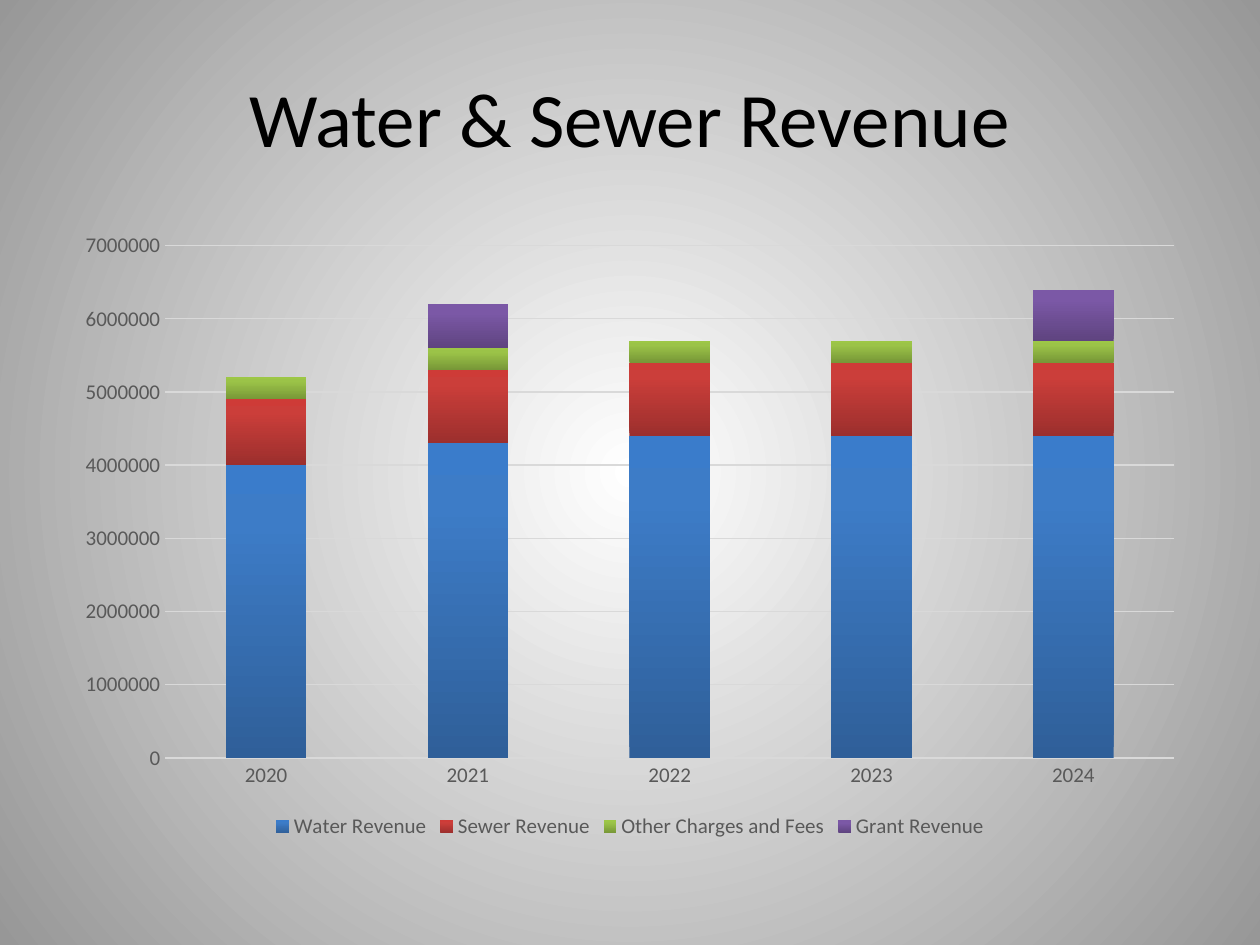
from dataclasses import dataclass

from pptx import Presentation
from pptx import util as u
from pptx.chart.data import CategoryChartData
from pptx.dml.color import RGBColor
from pptx.enum import chart as ch, text
from pptx.oxml import parse_xml
from pptx.oxml.ns import nsdecls, qn

FONT = "Calibri"
BLACK = RGBColor(0x00, 0x00, 0x00)
WHITE = RGBColor(0xFF, 0xFF, 0xFF)
EDGE_GREY = RGBColor(0x97, 0x97, 0x97)
LABEL_GREY = RGBColor(0x59, 0x59, 0x59)
GRID_GREY = RGBColor(0xD9, 0xD9, 0xD9)
BLUES = (RGBColor(0x2F, 0x5F, 0x99), RGBColor(0x3D, 0x7C, 0xC7), RGBColor(0x3A, 0x7C, 0xCB))
REDS = (RGBColor(0x9C, 0x2F, 0x2D), RGBColor(0xCB, 0x3E, 0x3A), RGBColor(0xCE, 0x3B, 0x37))
GREENS = (RGBColor(0x77, 0x97, 0x37), RGBColor(0x9B, 0xC3, 0x48), RGBColor(0x9D, 0xC7, 0x46))
PURPLES = (RGBColor(0x5F, 0x44, 0x80), RGBColor(0x7B, 0x58, 0xA6), RGBColor(0x7C, 0x57, 0xA8))

UPWARD = '<a:lin ang="16200000" scaled="0"/>'
FROM_CENTRE = ('<a:path path="circle"><a:fillToRect l="50000" t="50000" '
               'r="50000" b="50000"/></a:path>')
BAR_STOPS = (0, 80, 100)
MILLION = 1_000_000


@dataclass
class Revenue:
    name: str
    millions: tuple[float, ...]
    colours: tuple[RGBColor, ...]


YEARS = ("2020", "2021", "2022", "2023", "2024")
REVENUES = (
    Revenue("Water Revenue", (4, 4.3, 4.4, 4.4, 4.4), BLUES),
    Revenue("Sewer Revenue", (0.9, 1, 1, 1, 1), REDS),
    Revenue("Other Charges and Fees", (0.3,) * 5, GREENS),
    Revenue("Grant Revenue", (0, 0.6, 0, 0, 0.7), PURPLES),
)


def paint_gradient(fill, colours: tuple[RGBColor, ...], stops: tuple[int, ...],
                   direction: str) -> None:
    """Swap a solid fill for a gradient with percent stops."""
    fill.solid()
    parent = fill._xPr
    marks = "".join(f'<a:gs pos="{pos * 1000}"><a:srgbClr val="{colour}"/></a:gs>'
                    for pos, colour in zip(stops, colours))
    gradient = parse_xml(f'<a:gradFill {nsdecls("a")} rotWithShape="1">'
                         f'<a:gsLst>{marks}</a:gsLst>{direction}</a:gradFill>')
    parent.replace(parent.find(qn("a:solidFill")), gradient)


def style_font(font, size: float, colour: RGBColor) -> None:
    font.name, font.size, font.color.rgb = FONT, u.Pt(size), colour


def style_line(line, width: float) -> None:
    line.color.rgb, line.width = GRID_GREY, u.Pt(width)


def add_title(s, words: str) -> None:
    sp = s.shapes.title
    sp.left, sp.top, sp.width, sp.height = u.Cm(1.27), u.Cm(0.76), u.Cm(22.86), u.Cm(3.18)
    tf = sp.text_frame
    tf.vertical_anchor = text.MSO_ANCHOR.MIDDLE
    p = tf.paragraphs[0]
    p.alignment = text.PP_ALIGN.CENTER
    r = p.add_run()
    r.text = words
    style_font(r.font, 44, BLACK)


def add_revenue_chart(s, revenues: tuple[Revenue, ...]) -> None:
    data = CategoryChartData(number_format="General")
    data.categories = YEARS
    for revenue in revenues:
        data.add_series(revenue.name, [round(v * MILLION) for v in revenue.millions])
    chart = s.shapes.add_chart(ch.XL_CHART_TYPE.COLUMN_STACKED, u.Cm(1.27), u.Cm(4.45),
                               u.Cm(22.86), u.Cm(12.57), data).chart
    chart.has_title = False
    style_font(chart.font, 10, BLACK)

    # Stacked columns
    plot = chart.plots[0]
    plot.gap_width, plot.overlap, plot.vary_by_categories = 150, 100, False
    for series, revenue in zip(plot.series, revenues):
        paint_gradient(series.format.fill, revenue.colours, BAR_STOPS, UPWARD)

    # Axes and gridlines
    years, amounts = chart.category_axis, chart.value_axis
    for axis in (years, amounts):
        axis.major_tick_mark = axis.minor_tick_mark = ch.XL_TICK_MARK.NONE
        style_font(axis.tick_labels.font, 12, LABEL_GREY)
    style_line(years.format.line, 1)
    amounts.format.line.fill.background()
    amounts.minimum_scale, amounts.maximum_scale = 0, 7 * MILLION
    amounts.major_unit = MILLION
    amounts.has_major_gridlines = True
    style_line(amounts.major_gridlines.format.line, 0.75)

    # Legend
    chart.has_legend = True
    chart.legend.position = ch.XL_LEGEND_POSITION.BOTTOM
    chart.legend.include_in_layout = False
    style_font(chart.legend.font, 12, LABEL_GREY)


def main() -> None:
    prs = Presentation()
    prs.slide_width, prs.slide_height = u.Cm(25.4), u.Cm(19.05)
    s = prs.slides.add_slide(prs.slide_layouts.get_by_name("Title Only"))
    paint_gradient(s.background.fill, (WHITE, EDGE_GREY), (0, 100), FROM_CENTRE)
    add_title(s, "Water & Sewer Revenue")
    add_revenue_chart(s, REVENUES)
    prs.save("out.pptx")


if __name__ == "__main__":
    main()
